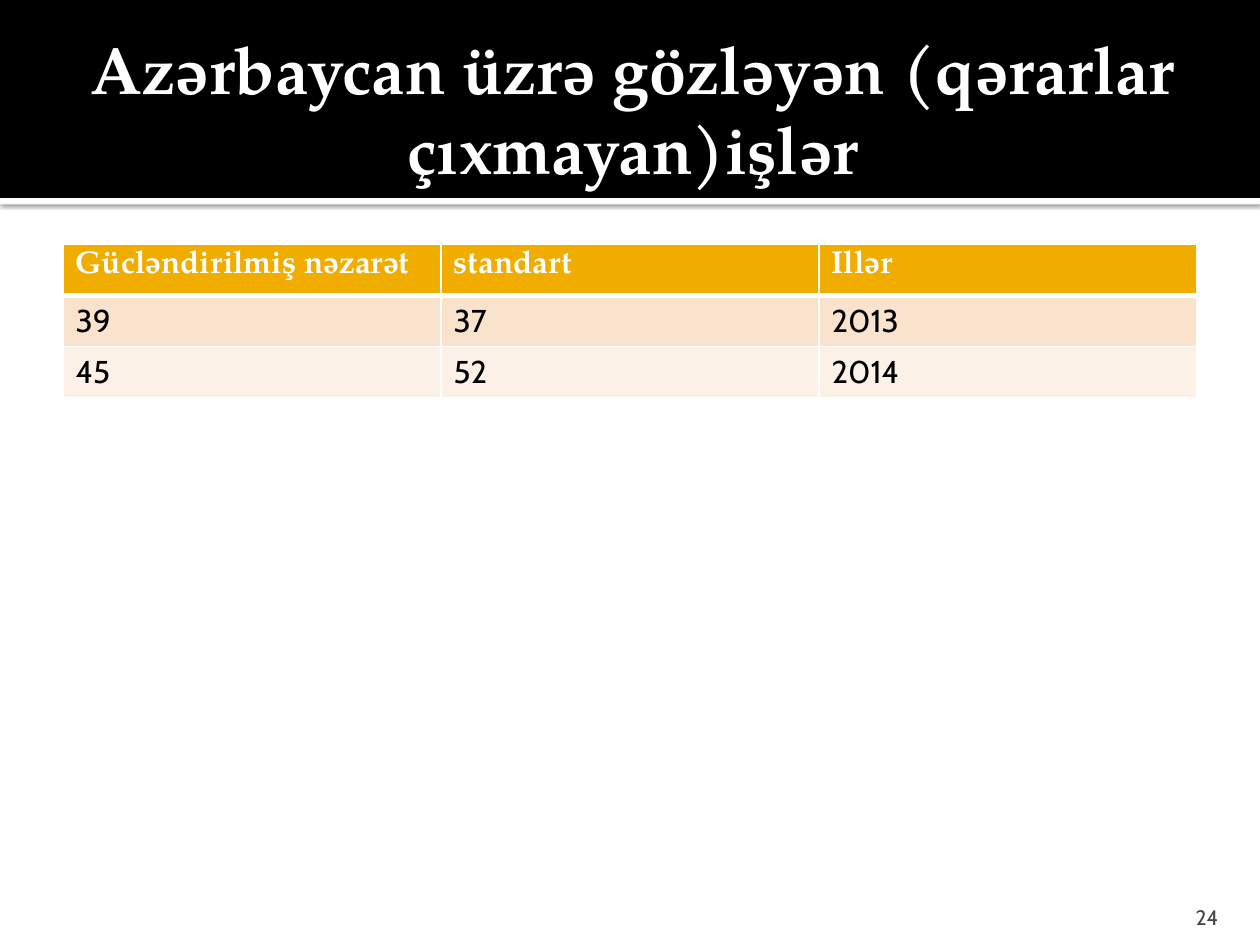
from lxml.etree import SubElement
from pptx import Presentation
from pptx.dml.color import RGBColor
from pptx.enum.shapes import MSO_SHAPE
from pptx.enum.text import MSO_ANCHOR, PP_ALIGN
from pptx.oxml.ns import qn
from pptx.util import Cm, Pt

TITLE = "Azərbaycan üzrə gözləyən (qərarlar çıxmayan)işlər"
ROWS = [
    ("Gücləndirilmiş nəzarət", "standart", "Illər"),
    ("39", "37", "2013"),
    ("45", "52", "2014"),
]
PAGE_NUMBER = "24"

WHITE = RGBColor(0xFF, 0xFF, 0xFF)
BLACK = RGBColor(0, 0, 0)
GREY = RGBColor(0x45, 0x45, 0x45)
ROW_FILLS = [
    RGBColor(0xF0, 0xAD, 0x00),
    RGBColor(0xF9, 0xE3, 0xCC),
    RGBColor(0xFC, 0xF1, 0xE7),
]
SERIF, SANS = "TeX Gyre Pagella", "Cabin"
COL_WIDTH, ROW_HEIGHT = Cm(7.62), Cm(1.03)


def style_run(p, font, size, color, bold=False):
    f = p.runs[0].font
    f.name, f.size, f.bold = font, Pt(size), bold
    f.color.rgb = color


def add_band(s, top, height, color):
    band = s.shapes.add_shape(MSO_SHAPE.RECTANGLE, 0, top, prs.slide_width, height)
    band.shadow.inherit = False
    band.fill.solid()
    band.fill.fore_color.rgb = color
    band.line.fill.background()
    return band


def add_shadow(shape):
    effects = shape._element.spPr.find(qn("a:effectLst"))
    shadow = SubElement(effects, qn("a:outerShdw"), blurRad=str(Pt(2.5)),
                        dist=str(Pt(0.8)), dir="5400000", algn="tl", rotWithShape="0")
    color = SubElement(shadow, qn("a:srgbClr"), val=str(BLACK))
    SubElement(color, qn("a:alpha"), val="60000")


def add_text(s, box, text, anchor, align, margins):
    tf = s.shapes.add_textbox(*(Cm(v) for v in box)).text_frame
    tf.word_wrap = True
    tf.vertical_anchor = anchor
    tf.margin_left, tf.margin_top, tf.margin_right, tf.margin_bottom = map(Cm, margins)
    tf.text = text
    p = tf.paragraphs[0]
    p.alignment = align
    return p


def set_borders(cell, widths):
    tcPr = cell._tc.get_or_add_tcPr()
    for i, (side, width) in enumerate(widths.items()):
        line = tcPr.makeelement(qn(f"a:{side}"), {"w": str(Pt(width))})
        fill = SubElement(line, qn("a:solidFill"))
        SubElement(fill, qn("a:srgbClr"), val=str(WHITE))
        tcPr.insert(i, line)  # borders come before the cell fill


prs = Presentation()
prs.slide_width, prs.slide_height = Cm(25.4), Cm(19.05)
s = prs.slides.add_slide(prs.slide_layouts[6])

# Header bands and title
add_shadow(add_band(s, Cm(3.99), Cm(0.13), WHITE))
add_band(s, 0, Cm(3.99), BLACK)
p = add_text(s, (1.27, 0.43, 22.86, 3.48), TITLE, MSO_ANCHOR.MIDDLE,
             PP_ALIGN.CENTER, (0.25, 0.13, 0.13, 0.13))
style_run(p, SERIF, 38, WHITE, True)

# Table of pending cases
n_rows, n_cols = len(ROWS), len(ROWS[0])
table = s.shapes.add_table(n_rows, n_cols, Cm(1.27), Cm(4.93),
                           COL_WIDTH * n_cols, ROW_HEIGHT * n_rows).table
for column in table.columns:
    column.width = COL_WIDTH
for r, values in enumerate(ROWS):
    table.rows[r].height = ROW_HEIGHT
    header = r == 0
    for c, value in enumerate(values):
        cell = table.cell(r, c)
        cell.text = value
        cell.fill.solid()
        cell.fill.fore_color.rgb = ROW_FILLS[r]
        style_run(cell.text_frame.paragraphs[0], SERIF if header else SANS, 18,
                  WHITE if header else BLACK, header)
        set_borders(cell, {"lnL": 1, "lnR": 1, "lnT": 3 if r == 1 else 1,
                           "lnB": 3 if header else 1})

# Page number
p = add_text(s, (22.78, 17.98, 2.03, 0.76), PAGE_NUMBER, MSO_ANCHOR.BOTTOM,
             PP_ALIGN.RIGHT, (0.25, 0.13, 0.25, 0))
style_run(p, SANS, 12, GREY)

prs.save("out.pptx")
